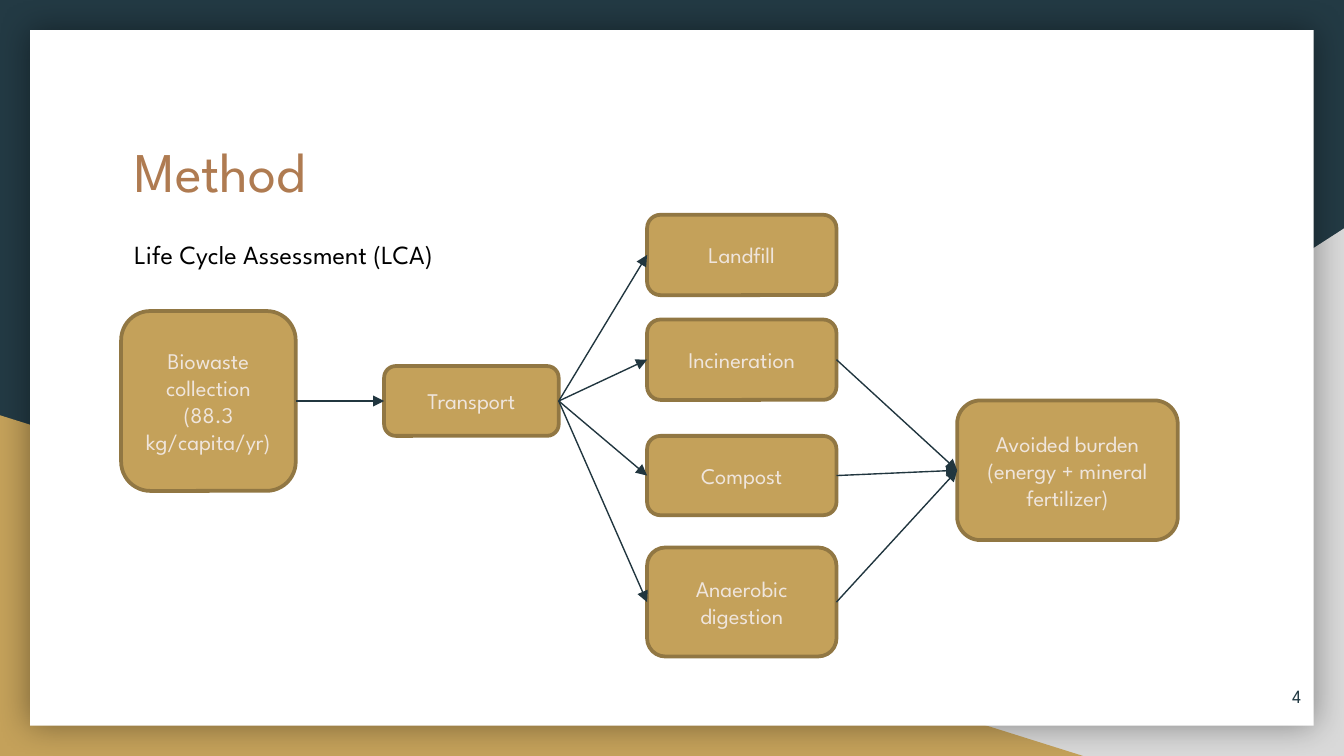
from lxml import etree
from pptx import Presentation
from pptx.dml.color import RGBColor
from pptx.enum.shapes import MSO_CONNECTOR, MSO_SHAPE
from pptx.enum.text import MSO_ANCHOR, PP_ALIGN
from pptx.oxml.ns import qn
from pptx.util import Cm, Pt

FONT = "League Spartan"
NAVY = RGBColor(0x23, 0x3A, 0x44)
ARROW_NAVY = RGBColor(0x21, 0x36, 0x3F)
GREY = RGBColor(0xD9, 0xD9, 0xD9)
GOLD = RGBColor(0xC4, 0xA1, 0x5A)
DARK_GOLD = RGBColor(0x91, 0x77, 0x43)
CREAM = RGBColor(0xEF, 0xE5, 0xDC)
COPPER = RGBColor(0xAF, 0x7B, 0x51)
WHITE = RGBColor(0xFF, 0xFF, 0xFF)
BLACK = RGBColor(0, 0, 0)

TRIANGLE = MSO_SHAPE.RIGHT_TRIANGLE
RECTANGLE = MSO_SHAPE.RECTANGLE
ROUNDED = MSO_SHAPE.ROUNDED_RECTANGLE
STRAIGHT = MSO_CONNECTOR.STRAIGHT
TOP, MIDDLE = MSO_ANCHOR.TOP, MSO_ANCHOR.MIDDLE
LEFT, CENTER, RIGHT = PP_ALIGN.LEFT, PP_ALIGN.CENTER, PP_ALIGN.RIGHT
LEFT_SITE, RIGHT_SITE = 1, 3

SLIDE_W, SLIDE_H = 25.4, 14.29
MARGIN = 2.29


def cm_box(box):
    return [Cm(length) for length in box]


def write(frame, text, size, color, align=LEFT, anchor=TOP, inset=None):
    frame.word_wrap = True
    frame.vertical_anchor = anchor
    if inset is not None:
        frame.margin_left = frame.margin_right = Cm(inset)
        frame.margin_top = frame.margin_bottom = Cm(inset)
    paragraph = frame.paragraphs[0]
    paragraph.alignment = align
    run = paragraph.add_run()
    run.text = text
    run.font.name = FONT
    run.font.size = Pt(size)
    run.font.color.rgb = color


def add_filled(slide, preset, box, color):
    shape = slide.shapes.add_shape(preset, *cm_box(box))
    shape.shadow.inherit = False
    shape.fill.solid()
    shape.fill.fore_color.rgb = color
    shape.line.fill.background()
    return shape


def add_glow(shape):
    """Give the shape a soft shadow, even on all sides."""
    effects = shape._element.spPr.find(qn("a:effectLst"))
    shadow = etree.SubElement(effects, qn("a:outerShdw"), blurRad=str(Pt(18)),
                              dist="0", algn="ctr", rotWithShape="0")
    black = etree.SubElement(shadow, qn("a:srgbClr"), val="000000")
    etree.SubElement(black, qn("a:alpha"), val="40000")


def add_backdrop(slide, width, height):
    slide.background.fill.solid()
    slide.background.fill.fore_color.rgb = NAVY
    grey_w, grey_h = 15.44, 9.97
    gold_w, gold_h = 20.47, 6.44
    grey_corner = add_filled(
        slide, TRIANGLE, (width - grey_w, height - grey_h, grey_w, grey_h), GREY)
    grey_corner._element.spPr.xfrm.set("flipH", "1")
    add_filled(slide, TRIANGLE, (0, height - gold_h, gold_w, gold_h), GOLD)
    edge = 0.57
    page = (edge, edge, width - 2 * edge, height - 2 * edge)
    add_glow(add_filled(slide, RECTANGLE, page, WHITE))


def place_title(slide, box, text):
    title = slide.shapes.title
    slide.shapes._spTree.append(title._element)  # bring in front of the page
    title.left, title.top, title.width, title.height = cm_box(box)
    write(title.text_frame, text, 30, COPPER, inset=0.25)


def add_label(slide, box, text, size, color, **layout):
    label = slide.shapes.add_textbox(*cm_box(box))
    write(label.text_frame, text, size, color, **layout)


def add_step(slide, box, text):
    step = add_filled(slide, ROUNDED, box, GOLD)
    step.line.color.rgb = DARK_GOLD
    step.line.width = Pt(2)
    write(step.text_frame, text, 12, CREAM, CENTER, MIDDLE)
    return step


def add_arrow(slide, source, target):
    arrow = slide.shapes.add_connector(STRAIGHT, 0, 0, 0, 0)
    arrow.begin_connect(source, RIGHT_SITE)
    arrow.end_connect(target, LEFT_SITE)
    arrow.line.color.rgb = ARROW_NAVY
    arrow.line.width = Pt(0.75)
    etree.SubElement(arrow.line._get_or_add_ln(), qn("a:tailEnd"), type="triangle")
    etree.SubElement(arrow._element.spPr, qn("a:effectLst"))


def add_flow(slide, left, top):
    """Draw the process from collection to avoided burden."""
    axis = top + 3.52
    step_w, gap = 3.3, 1.67
    transport_left = left + step_w + gap
    treatment_left = transport_left + step_w + gap

    def centred(x, middle, width, height, text):
        return add_step(slide, (x, middle - height / 2, width, height), text)

    collection = centred(left, axis, step_w, 3.4,
                         "Biowaste collection (88.3 kg/capita/yr)")
    transport = centred(transport_left, axis, step_w, 1.32, "Transport")
    treatments = [
        add_step(slide, (treatment_left, top + offset, 3.58, height), text)
        for text, offset, height in (
            ("Landfill", 0, 1.52),
            ("Incineration", 1.98, 1.52),
            ("Compost", 4.18, 1.5),
            ("Anaerobic digestion", 6.29, 2.06),
        )
    ]
    burden = centred(left + 15.8, top + 4.83, 4.17, 2.64,
                     "Avoided burden (energy + mineral fertilizer)")

    add_arrow(slide, collection, transport)
    for treatment in treatments:
        add_arrow(slide, transport, treatment)
    for recovery in treatments[1:]:
        add_arrow(slide, recovery, burden)


def main():
    deck = Presentation()
    deck.slide_width, deck.slide_height = Cm(SLIDE_W), Cm(SLIDE_H)
    slide = deck.slides.add_slide(deck.slide_layouts[5])
    add_backdrop(slide, SLIDE_W, SLIDE_H)
    place_title(slide, (MARGIN, 2.34, 20.85, 2.64), "Method")
    add_label(slide, (23.32, 12.62, 1.52, 1.09), "4", 10, NAVY,
              align=RIGHT, anchor=MIDDLE, inset=0.25)
    add_flow(slide, MARGIN, 4.06)
    add_label(slide, (MARGIN, 4.39, 6.99, 0.86),
              "Life Cycle Assessment (LCA)", 14, BLACK)
    deck.save("out.pptx")


if __name__ == "__main__":
    main()
